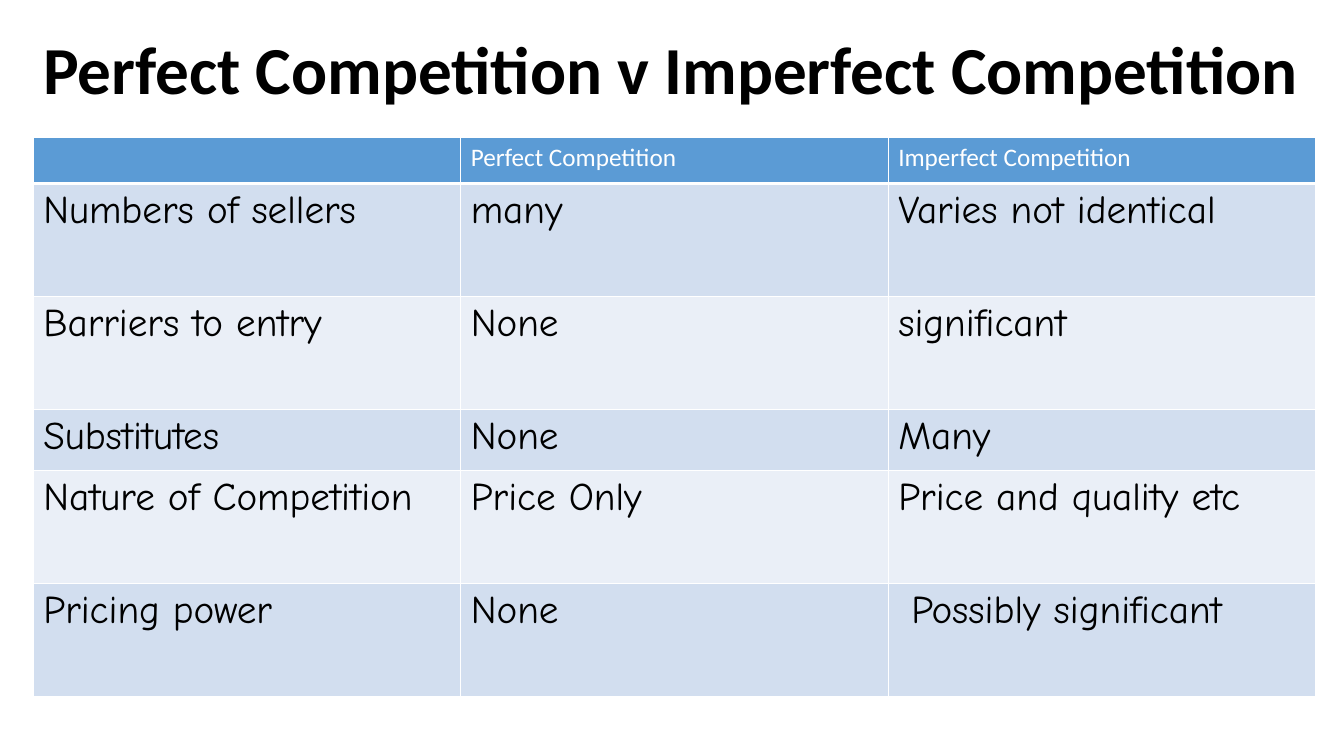
from lxml import etree
from pptx import Presentation
from pptx import util as u
from pptx.dml.color import RGBColor
from pptx.enum import text
from pptx.oxml import ns

BLACK = RGBColor(0x00, 0x00, 0x00)
WHITE = RGBColor(0xFF, 0xFF, 0xFF)
HEADER_BLUE = RGBColor(0x5B, 0x9B, 0xD5)
BANDS = RGBColor(0xEA, 0xEF, 0xF7), RGBColor(0xD2, 0xDE, 0xEF)

SLIDE_SIZE = u.Inches(13.33), u.Inches(7.5)
MARGIN, CONTENT_WIDTH = u.Inches(0.33), u.Inches(12.72)
TITLE_BOX = MARGIN, u.Inches(0.25), CONTENT_WIDTH, u.Inches(0.94)
TABLE_BOX = MARGIN, u.Inches(1.36), CONTENT_WIDTH, u.Inches(5.55)
ROW_SHARES = [0.46, 1.12, 1.12, 0.61, 1.12, 1.12]

TITLE_FONT = {"name": "Calibri", "size": u.Pt(48), "bold": True}
HEADER_FONT = {"name": "Calibri", "size": u.Pt(18), "bold": False}
BODY_FONT = {"name": "Comic Neue", "size": u.Pt(28), "bold": False}

TITLE = "Perfect Competition v Imperfect Competition"
COMPARISON = [
    ("", "Perfect Competition", "Imperfect Competition"),
    ("Numbers of sellers", "many", "Varies not identical"),
    ("Barriers to entry", "None", "significant"),
    ("Substitutes", "None", "Many"),
    ("Nature of Competition", "Price Only", "Price and quality etc"),
    ("Pricing power", "None", " Possibly significant"),
]


def write(paragraph, wording, font_values, color):
    """Put the wording in a paragraph with the given font values."""
    paragraph.text = wording
    for attribute, value in font_values.items():
        setattr(paragraph.font, attribute, value)
    paragraph.font.color.rgb = color


def add_borders(cell, bottom_width):
    """Draw white rules on all four sides of a cell."""
    properties = cell._tc.get_or_add_tcPr()
    widths = {"lnL": 1, "lnR": 1, "lnT": 1, "lnB": bottom_width}
    for side, width in widths.items():
        rule = etree.SubElement(properties, ns.qn(f"a:{side}"), w=str(u.Pt(width)))
        paint = etree.SubElement(rule, ns.qn("a:solidFill"))
        etree.SubElement(paint, ns.qn("a:srgbClr"), val=str(WHITE))


def add_title(slide, box):
    """Place the heading in the given box."""
    frame = slide.shapes.add_textbox(*box).text_frame
    frame.word_wrap = True
    frame.vertical_anchor = text.MSO_ANCHOR.MIDDLE
    heading = frame.paragraphs[0]
    write(heading, TITLE, TITLE_FONT, BLACK)
    heading.line_spacing = 0.9


def add_comparison(slide, box):
    """Fill the given box with the banded comparison table."""
    height = box[3]
    comparison = slide.shapes.add_table(len(COMPARISON), len(COMPARISON[0]), *box).table
    for row, share in zip(comparison.rows, ROW_SHARES):
        row.height = int(height * share / sum(ROW_SHARES))
    for row_number, wordings in enumerate(COMPARISON):
        is_header = row_number == 0
        font_values = HEADER_FONT if is_header else BODY_FONT
        for column_number, wording in enumerate(wordings):
            cell = comparison.cell(row_number, column_number)
            write(cell.text_frame.paragraphs[0], wording, font_values,
                  WHITE if is_header else BLACK)
            add_borders(cell, 3 if is_header else 1)
            cell.fill.solid()
            cell.fill.fore_color.rgb = HEADER_BLUE if is_header else BANDS[row_number % 2]


def main():
    """Build and save the slide."""
    deck = Presentation()
    deck.slide_width, deck.slide_height = SLIDE_SIZE
    slide = deck.slides.add_slide(deck.slide_layouts[6])
    add_title(slide, TITLE_BOX)
    add_comparison(slide, TABLE_BOX)
    deck.save("out.pptx")


if __name__ == "__main__":
    main()
